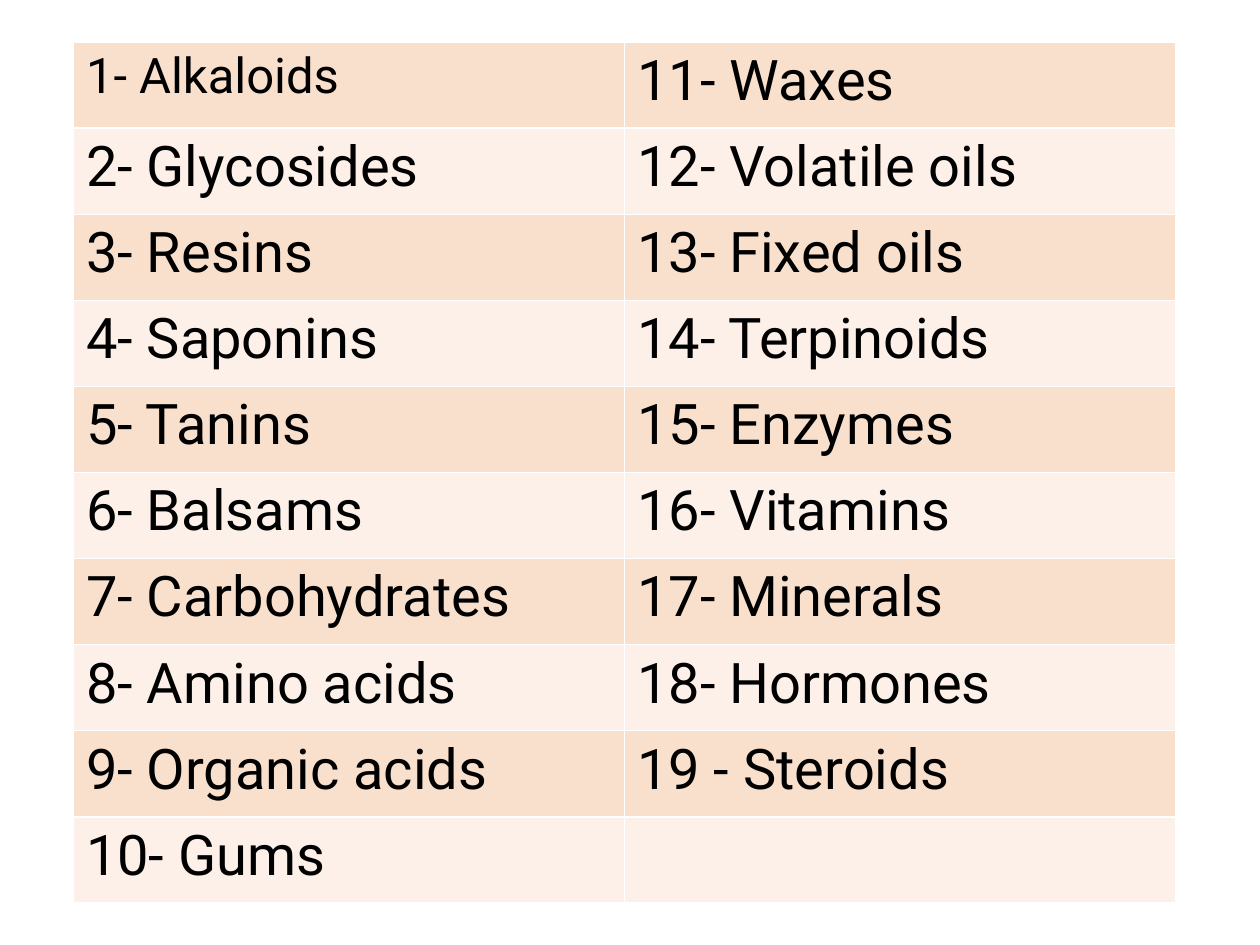
from lxml import etree
from pptx import Presentation
from pptx.dml.color import RGBColor
from pptx.oxml.ns import qn
from pptx.util import Cm, Pt

COLORS = {"odd": "F9E0CD", "even": "FCF0E8", "text": "000000", "border": "FFFFFF"}
FONT = "Roboto"
BLANK_LAYOUT = 6
BORDER_EDGES = ("a:lnL", "a:lnR", "a:lnT", "a:lnB")

COMPOUNDS = [
    ("1- Alkaloids", "11- Waxes"),
    ("2- Glycosides", "12- Volatile oils"),
    ("3- Resins", "13- Fixed oils"),
    ("4- Saponins", "14- Terpinoids"),
    ("5- Tanins", "15- Enzymes"),
    ("6- Balsams", "16- Vitamins"),
    ("7- Carbohydrates", "17- Minerals"),
    ("8- Amino acids", "18- Hormones"),
    ("9- Organic acids", "19 - Steroids"),
    ("10- Gums", ""),
]
SMALLER = {"1- Alkaloids": 28}


def write(paragraph, text, size=32, color="text"):
    run = paragraph.add_run()
    run.text = text
    run.font.name = FONT
    run.font.size = Pt(size)
    run.font.color.rgb = RGBColor.from_string(COLORS[color])


def add_borders(cell):
    properties = cell._tc.get_or_add_tcPr()
    for edge in BORDER_EDGES:
        line = etree.SubElement(properties, qn(edge), w=str(Pt(1)))
        fill = etree.SubElement(line, qn("a:solidFill"))
        etree.SubElement(fill, qn("a:srgbClr"), val=COLORS["border"])


def main():
    deck = Presentation()
    deck.slide_width, deck.slide_height = Cm(25.4), Cm(19.05)
    slide = deck.slides.add_slide(deck.slide_layouts[BLANK_LAYOUT])
    compounds = slide.shapes.add_table(
        len(COMPOUNDS), len(COMPOUNDS[0]), Cm(1.48), Cm(0.85), Cm(22.22), Cm(17.35)
    ).table
    compounds.first_row = False
    for row, names in enumerate(COMPOUNDS):
        for column, name in enumerate(names):
            cell = compounds.cell(row, column)
            add_borders(cell)
            cell.fill.solid()
            band = "even" if row % 2 else "odd"
            cell.fill.fore_color.rgb = RGBColor.from_string(COLORS[band])
            if name:
                write(cell.text_frame.paragraphs[0], name, size=SMALLER.get(name, 32))
    deck.save("out.pptx")


if __name__ == "__main__":
    main()
